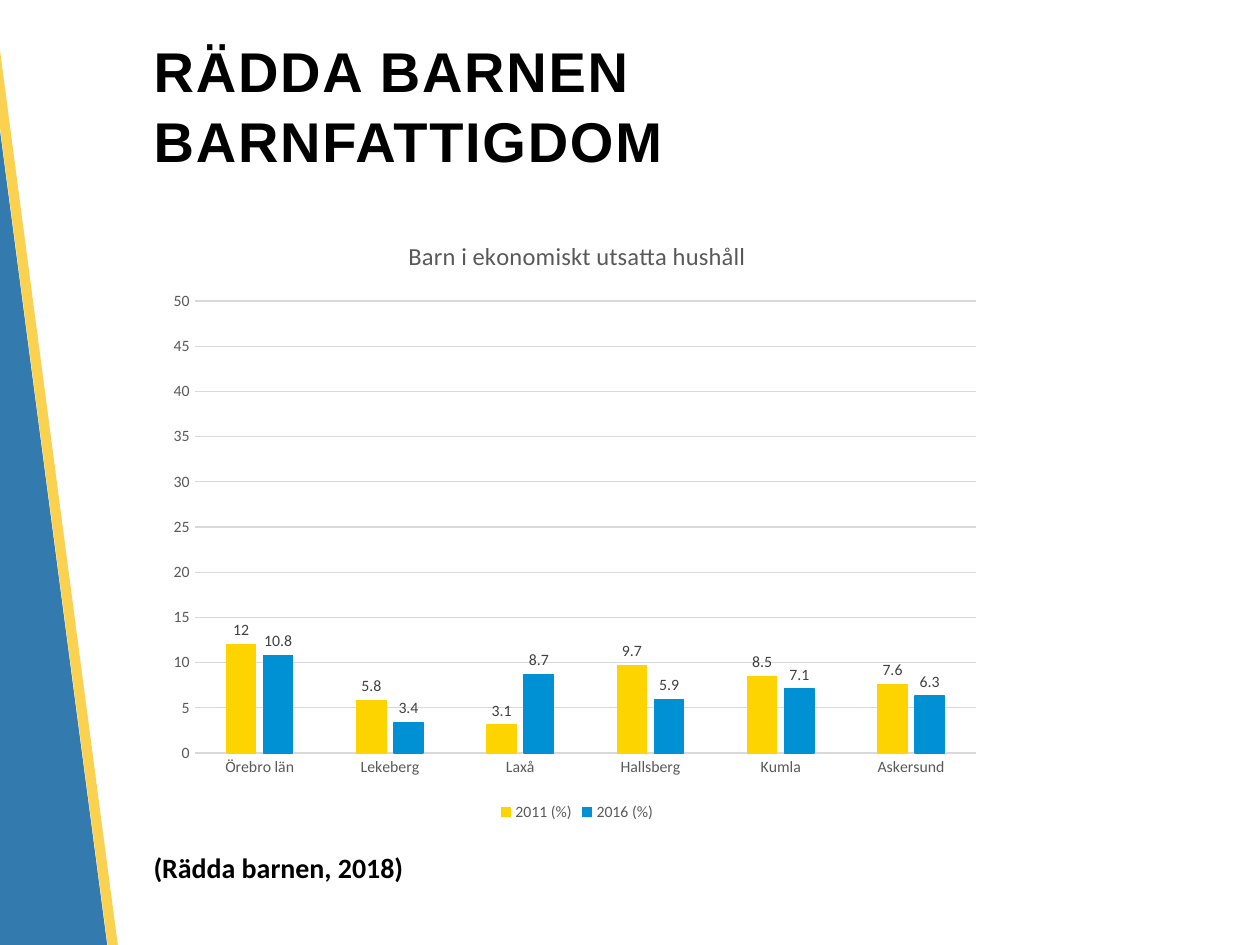
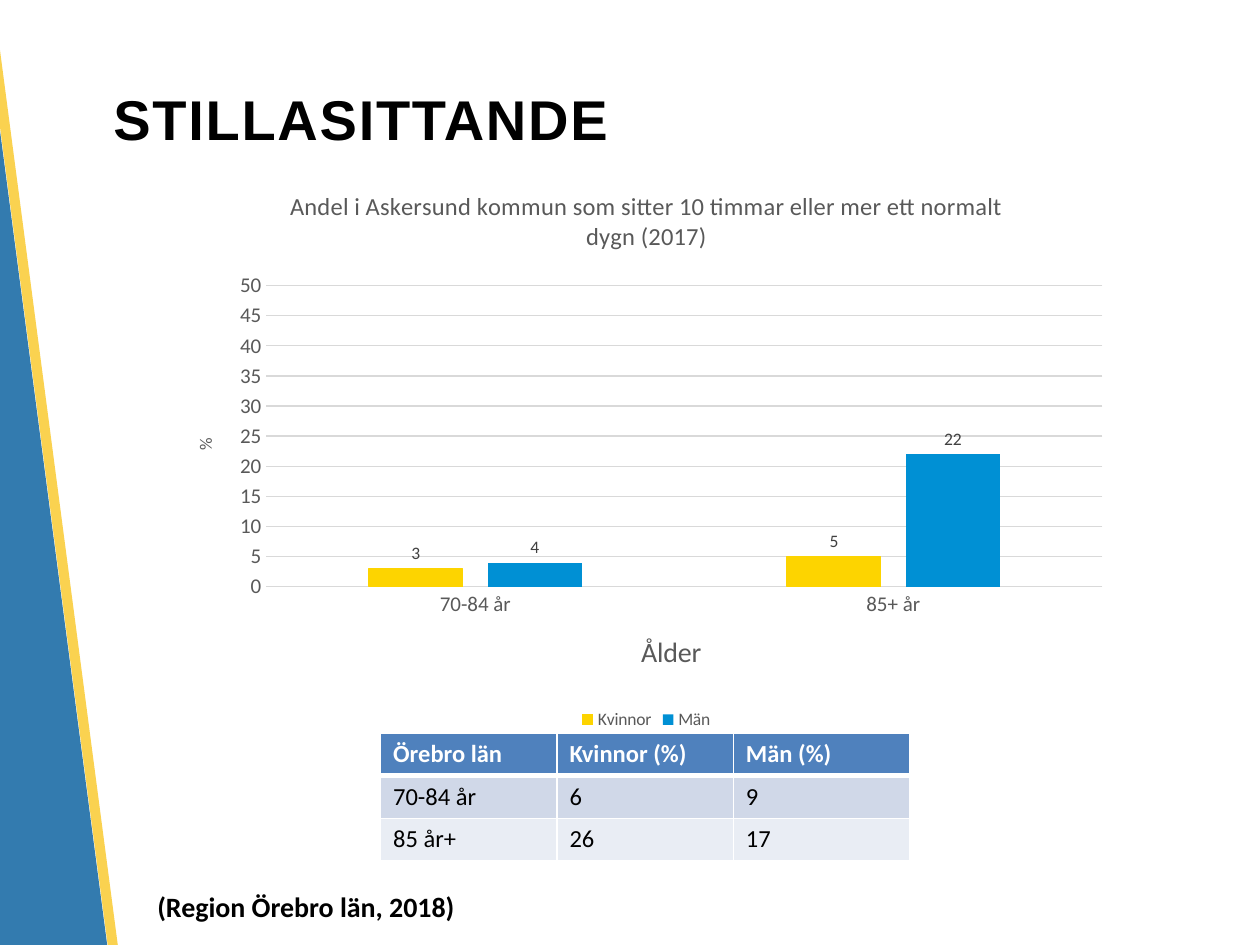
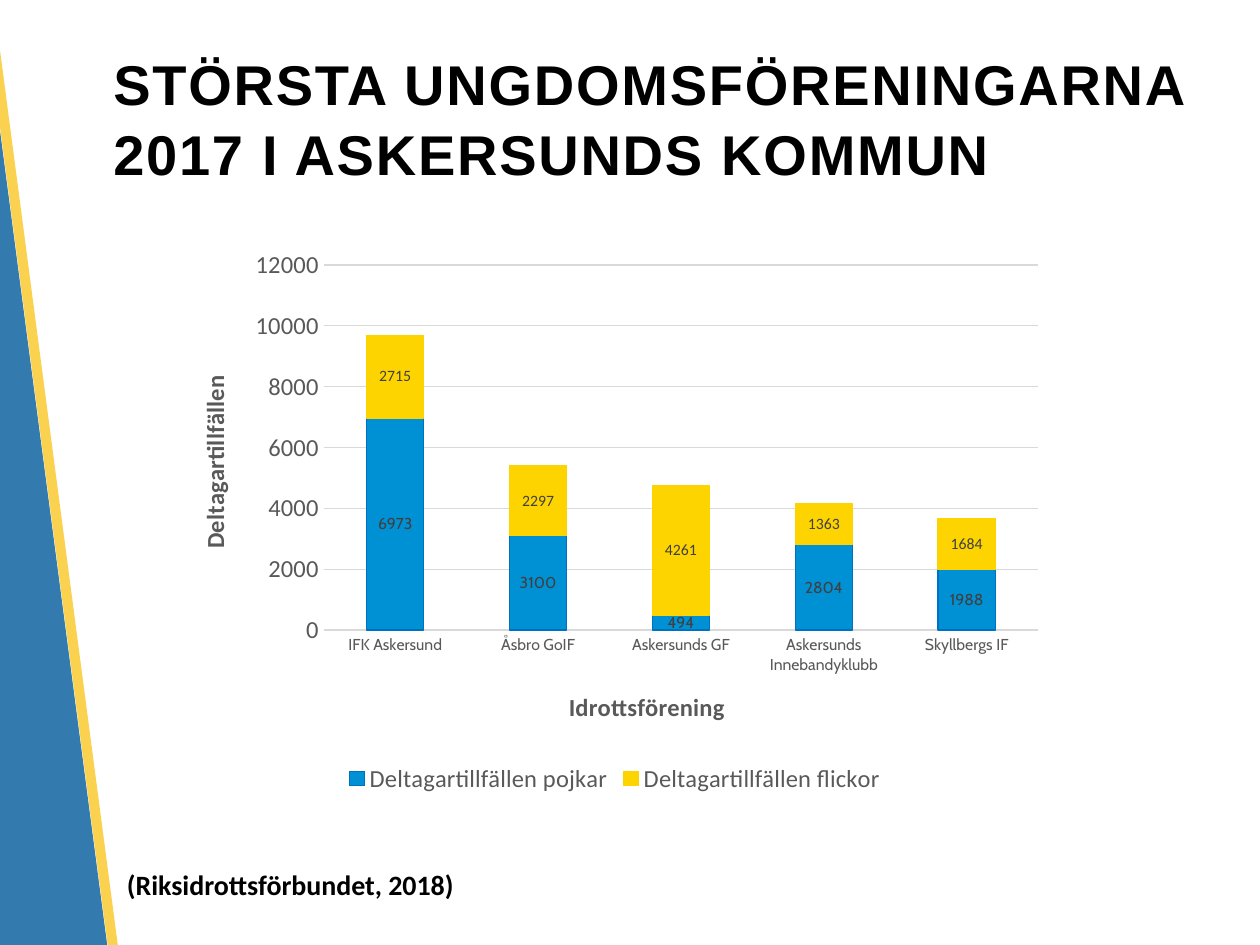
from dataclasses import dataclass

import lxml.etree
import pptx
import pptx.chart.data
import pptx.dml.color
import pptx.enum.chart
import pptx.enum.shapes
import pptx.enum.text
import pptx.oxml
import pptx.oxml.ns
import pptx.util

COLUMNS, ROWS = 100, 75
CLUSTERED = pptx.enum.chart.XL_CHART_TYPE.COLUMN_CLUSTERED
STACKED = pptx.enum.chart.XL_CHART_TYPE.COLUMN_STACKED
qn = pptx.oxml.ns.qn


@dataclass(frozen=True)
class Theme:
    heading_font: str = "Arial"
    body_font: str = "Calibri"
    accent_font: str = "Cabin"
    ink: str = "000000"
    paper: str = "FFFFFF"
    band_blue: str = "005B9C"
    band_yellow: str = "FAC828"
    blue: str = "0090D4"
    blue_edge: str = "0070C0"
    yellow: str = "FDD400"
    grid: str = "D9D9D9"
    axis_text: str = "595959"
    label_text: str = "404040"
    table_head: str = "4F81BD"
    table_rows: tuple = ("D0D8E8", "E9EDF4")
    title_size: int = 32
    caption_size: int = 16
    table_size: int = 14
    chart_title_size: int = 14
    chart_size: int = 10
    small_size: int = 9


@dataclass(frozen=True)
class Series:
    name: str
    values: tuple
    fill: str
    edge: str = ""
    font: str = Theme.body_font


@dataclass(frozen=True)
class AxisStyle:
    size: int
    title: str = ""
    title_size: int = Theme.chart_size
    bold: bool = False
    font: str = Theme.body_font


def rgb(color):
    return pptx.dml.color.RGBColor.from_string(color)


def set_font(font, size, color, bold=False, name=Theme.body_font):
    font.name = name
    font.size = pptx.util.Pt(size)
    font.bold = bold
    font.color.rgb = rgb(color)


def set_line(line, color):
    line.color.rgb = rgb(color)
    line.width = pptx.util.Pt(0.75)


def set_border(cell, side, color, points):
    """Draw one cell border; side is L, R, T or B."""
    border = lxml.etree.Element(qn(f"a:ln{side}"), w=str(pptx.util.Pt(points)))
    fill = lxml.etree.SubElement(border, qn("a:solidFill"))
    lxml.etree.SubElement(fill, qn("a:srgbClr"), val=color)
    properties = cell._tc.get_or_add_tcPr()
    properties.insert("LRTB".index(side), border)


def place_plot(chart, area):
    """Fix the inner plot area, given as x, y, width and height shares of the chart."""
    plot_area = chart._chartSpace.chart.plotArea
    for old in plot_area.findall(qn("c:layout")):
        plot_area.remove(old)
    layout = lxml.etree.Element(qn("c:layout"))
    manual = lxml.etree.SubElement(layout, qn("c:manualLayout"))
    settings = [("layoutTarget", "inner"), ("xMode", "edge"), ("yMode", "edge")]
    settings += zip("xywh", area)
    for tag, value in settings:
        lxml.etree.SubElement(manual, qn(f"c:{tag}"), val=str(value))
    plot_area.insert(0, layout)


class SlideBuilder:
    def __init__(self, theme):
        self.theme = theme
        self.deck = pptx.Presentation()
        self.deck.slide_width = pptx.util.Inches(10)
        self.deck.slide_height = pptx.util.Inches(7.5)
        self.page = None

    def frame(self, left, top, width, height):
        """Turn grid columns and rows into lengths."""
        across = self.deck.slide_width / COLUMNS
        down = self.deck.slide_height / ROWS
        return [round(count * unit) for count, unit in
                zip((left, top, width, height), (across, down, across, down))]

    def add_page(self, title_lines, title_frame):
        self.page = self.deck.slides.add_slide(self.deck.slide_layouts[5])
        box = self.page.shapes.title
        box.left, box.top, box.width, box.height = self.frame(*title_frame)
        text = box.text_frame
        text.auto_size = pptx.enum.text.MSO_AUTO_SIZE.NONE
        text.word_wrap = True
        text.vertical_anchor = pptx.enum.text.MSO_ANCHOR.MIDDLE
        para = text.paragraphs[0]
        para.alignment = pptx.enum.text.PP_ALIGN.LEFT
        para.line_spacing = 1.04
        for number, line in enumerate(title_lines):
            if number:
                para.add_line_break()
            span = para.add_run()
            span.text = line
            set_font(span.font, self.theme.title_size, self.theme.ink, True,
                     self.theme.heading_font)
            span.font._element.set("spc", "100")

    def add_master_band(self, number, frame, color, opacity):
        """Draw a slanted band and hand it to the master, so that every slide shows it."""
        band = self.page.shapes.add_shape(
            pptx.enum.shapes.MSO_SHAPE.RECTANGLE, *self.frame(*frame))
        band.name = f"Side band {number}"
        band.rotation = 352.5
        band.shadow.inherit = False
        band.fill.solid()
        band.fill.fore_color.rgb = rgb(color)
        band.line.fill.background()
        tint = band.element.spPr.find(".//" + qn("a:srgbClr"))
        lxml.etree.SubElement(tint, qn("a:alpha"), val=str(opacity * 1000))
        band.element.nvSpPr.cNvPr.set("id", str(100 + number))
        self.deck.slide_master.element.cSld.spTree.insert(1 + number, band.element)

    def add_caption(self, words, frame):
        box = self.page.shapes.add_textbox(*self.frame(*frame))
        box.text_frame.word_wrap = False
        span = box.text_frame.paragraphs[0].add_run()
        span.text = words
        set_font(span.font, self.theme.caption_size, self.theme.ink, True)

    def add_table(self, rows, frame):
        theme = self.theme
        table = self.page.shapes.add_table(
            len(rows), len(rows[0]), *self.frame(*frame)).table
        for row, words in enumerate(rows):
            head = row == 0
            for column, word in enumerate(words):
                cell = table.cell(row, column)
                cell.fill.solid()
                cell.fill.fore_color.rgb = rgb(
                    theme.table_head if head else theme.table_rows[(row - 1) % 2])
                for side in "LRTB":
                    thick = (head and side == "B") or (row == 1 and side == "T")
                    set_border(cell, side, theme.paper, 3 if thick else 1)
                span = cell.text_frame.paragraphs[0].add_run()
                span.text = word
                set_font(span.font, theme.table_size,
                         theme.paper if head else theme.ink, head)

    def write_chart_title(self, owner, words, size, bold=False):
        """Title a chart or an axis."""
        owner.has_title = True
        title = owner.chart_title if hasattr(owner, "chart_title") else owner.axis_title
        span = title.text_frame.paragraphs[0].add_run()
        span.text = words
        set_font(span.font, size, self.theme.axis_text, bold)

    def style_axis(self, axis, style):
        set_font(axis.tick_labels.font, style.size, self.theme.axis_text, name=style.font)
        axis.major_tick_mark = pptx.enum.chart.XL_TICK_MARK.NONE
        axis.minor_tick_mark = pptx.enum.chart.XL_TICK_MARK.NONE
        if style.title:
            self.write_chart_title(axis, style.title, style.title_size, style.bold)
        else:
            axis.has_title = False

    def add_column_chart(self, kind, frame, plot_share, categories, series_list,
                         category_style, value_style, legend_size, label_size,
                         gap, overlap, title="", top=None):
        theme = self.theme
        data = pptx.chart.data.CategoryChartData()
        data.categories = categories
        for series in series_list:
            data.add_series(series.name, series.values)
        chart = self.page.shapes.add_chart(kind, *self.frame(*frame), data).chart
        set_font(chart.font, theme.chart_size, theme.ink)
        if title:
            self.write_chart_title(chart, title, theme.chart_title_size)
            chart.chart_title.include_in_layout = False
        else:
            chart.has_title = False
        chart.has_legend = True
        chart.legend.position = pptx.enum.chart.XL_LEGEND_POSITION.BOTTOM
        chart.legend.include_in_layout = False
        set_font(chart.legend.font, legend_size, theme.axis_text)

        self.style_axis(chart.category_axis, category_style)
        set_line(chart.category_axis.format.line, theme.grid)
        values = chart.value_axis
        self.style_axis(values, value_style)
        values.format.line.fill.background()
        values.minimum_scale = 0
        if top:
            values.maximum_scale = top
            values.major_unit = top / 10
        values.has_major_gridlines = True
        set_line(values.major_gridlines.format.line, theme.grid)

        plot = chart.plots[0]
        plot.vary_by_categories = False
        plot.gap_width, plot.overlap = gap, overlap
        place = pptx.enum.chart.XL_LABEL_POSITION
        for drawn, series in zip(plot.series, series_list):
            drawn.format.fill.solid()
            drawn.format.fill.fore_color.rgb = rgb(series.fill)
            if series.edge:
                set_line(drawn.format.line, series.edge)
            else:
                drawn.format.line.fill.background()
            labels = drawn.data_labels
            labels.show_value = True
            labels.position = place.CENTER if kind == STACKED else place.OUTSIDE_END
            set_font(labels.font, label_size, theme.label_text, name=series.font)
        place_plot(chart, plot_share)


def main():
    theme = Theme()
    builder = SlideBuilder(theme)
    clustered = dict(kind=CLUSTERED, gap=219, overlap=-27, top=50)

    builder.add_page(["RÄDDA BARNEN", "BARNFATTIGDOM"], (11.2, 2, 86.5, 12.5))
    builder.add_master_band(1, (-5.2, -16.4, 9.1, 113.3), theme.band_blue, 80)
    builder.add_master_band(2, (3.8, -17.7, 0.8, 113.2), theme.band_yellow, 81)
    builder.add_column_chart(
        frame=(12.8, 17.1, 66, 48.5), plot_share=(0.04, 0.14, 0.94, 0.74),
        title="Barn i ekonomiskt utsatta hushåll",
        categories=["Örebro län", "Lekeberg", "Laxå", "Hallsberg", "Kumla", "Askersund"],
        series_list=[
            Series("2011 (%)", (12, 5.8, 3.1, 9.7, 8.5, 7.6), theme.yellow, theme.yellow),
            Series("2016 (%)", (10.8, 3.4, 8.7, 5.9, 7.1, 6.3), theme.blue, theme.blue)],
        category_style=AxisStyle(theme.small_size),
        value_style=AxisStyle(theme.small_size),
        legend_size=theme.small_size, label_size=theme.small_size, **clustered)
    builder.add_caption("(Rädda barnen, 2018)", (11.2, 67, 22.1, 3.7))

    builder.add_page(["STILLASITTANDE"], (8, 3, 86.5, 12.5))
    builder.add_table([("Örebro län", "Kvinnor (%)", "Män (%)"),
                       ("70-84 år", "6", "9"),
                       ("85 år+", "26", "17")], (30.2, 58.2, 42, 10.1))
    builder.add_caption("(Region Örebro län, 2018)", (11.5, 70.1, 27.2, 3.7))
    builder.add_column_chart(
        frame=(13.6, 13.2, 75.4, 45.1), plot_share=(0.1, 0.21, 0.88, 0.53),
        title="Andel i Askersund kommun som sitter 10 timmar eller mer "
              "ett normalt dygn (2017)",
        categories=["70-84 år", "85+ år"],
        series_list=[Series("Kvinnor", (3, 5), theme.yellow, theme.yellow),
                     Series("Män", (4, 22), theme.blue)],
        category_style=AxisStyle(12, "Ålder", 16),
        value_style=AxisStyle(12, "%"),
        legend_size=theme.chart_size, label_size=theme.chart_size, **clustered)

    builder.add_page(["STÖRSTA UNGDOMSFÖRENINGARNA 2017 I ASKERSUNDS KOMMUN"],
                     (8, 3, 96.4, 12.5))
    builder.add_caption("(Riksidrottsförbundet, 2018)", (9.1, 68.4, 28.4, 3.7))
    builder.add_column_chart(
        kind=STACKED, gap=150, overlap=100,
        frame=(13.8, 18.8, 70, 44.6), plot_share=(0.17, 0.05, 0.81, 0.65),
        categories=["IFK Askersund", "Åsbro GoIF", "Askersunds GF",
                    "Askersunds Innebandyklubb", "Skyllbergs IF"],
        series_list=[
            Series("Deltagartillfällen pojkar", (6973, 3100, 494, 2804, 1988),
                   theme.blue, theme.blue_edge, theme.accent_font),
            Series("Deltagartillfällen flickor", (2715, 2297, 4261, 1363, 1684),
                   theme.yellow, theme.yellow)],
        category_style=AxisStyle(theme.small_size, "Idrottsförening", 14, True,
                                 theme.accent_font),
        value_style=AxisStyle(14, "Deltagartillfällen", 14, True),
        legend_size=14, label_size=theme.small_size)

    builder.deck.save("out.pptx")


if __name__ == "__main__":
    main()
